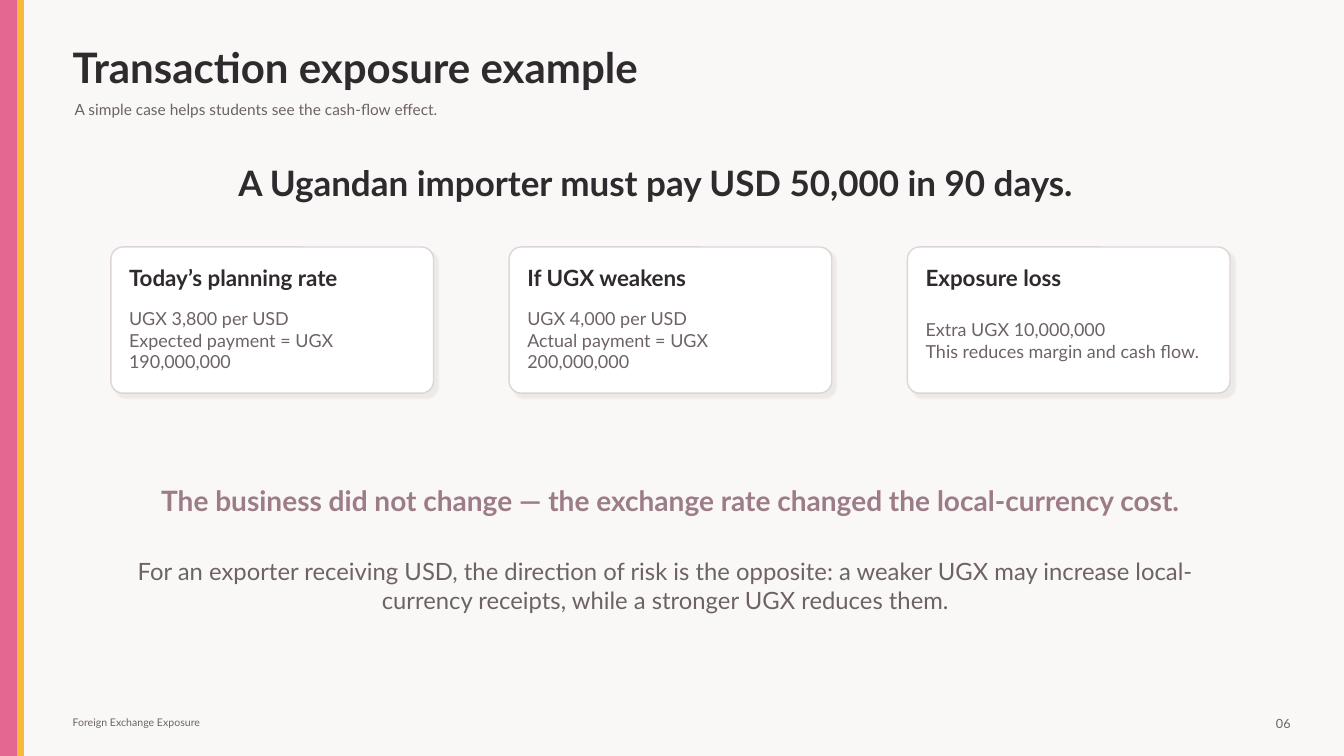
from dataclasses import dataclass

from lxml import etree
from pptx import Presentation, util as u
from pptx.dml import color
from pptx.enum import shapes, text
from pptx.oxml import ns

EMU_PER_PX = 9144


@dataclass(frozen=True)
class Theme:
    font: str = "Lato"
    paper: str = "FAF8F6"
    pink: str = "E46791"
    gold: str = "FAB938"
    ink: str = "2F2A2D"
    muted: str = "6D6264"
    mauve: str = "9B7C87"
    card: str = "FFFFFF"
    border: str = "D8CCD0"
    shadow: str = "B8ADA8"
    title_size: float = 30
    lead_size: float = 25
    takeaway_size: float = 20
    note_size: float = 17
    heading_size: float = 16
    body_size: float = 12.8
    subtitle_size: float = 11
    number_size: float = 9
    footer_size: float = 7.5


def px(*lengths):
    return [u.Emu(length * EMU_PER_PX) for length in lengths]


def rgb(value):
    return color.RGBColor.from_string(value)


def write_text(shape, content, *, font, size, ink, bold=False, align=text.PP_ALIGN.LEFT):
    frame = shape.text_frame
    frame.text = content
    frame.word_wrap = True
    frame.auto_size = text.MSO_AUTO_SIZE.NONE
    frame.vertical_anchor = text.MSO_ANCHOR.MIDDLE
    frame.margin_left = frame.margin_top = frame.margin_right = frame.margin_bottom = 0
    for paragraph in frame.paragraphs:
        paragraph.alignment = align
        paragraph.font.name = font
        paragraph.font.size = u.Pt(size)
        paragraph.font.bold = bold
        paragraph.font.color.rgb = rgb(ink)


class SlideBuilder:
    def __init__(self, slide, theme):
        self.slide = slide
        self.theme = theme
        fill = slide.background.fill
        fill.solid()
        fill.fore_color.rgb = rgb(theme.paper)

    def title(self, content, box):
        shape = self.slide.shapes.title
        shape.left, shape.top, shape.width, shape.height = px(*box)
        write_text(shape, content, font=self.theme.font, size=self.theme.title_size,
                   ink=self.theme.ink, bold=True)

    def label(self, content, box, **style):
        shape = self.slide.shapes.add_textbox(*px(*box))
        write_text(shape, content, font=self.theme.font, **style)

    def panel(self, kind, box, fill, line):
        shape = self.slide.shapes.add_shape(kind, *px(*box))
        shape.shadow.inherit = False
        shape.fill.solid()
        shape.fill.fore_color.rgb = rgb(fill)
        shape.line.color.rgb = rgb(line)
        shape.line.width = u.Pt(1)
        return shape

    def bar(self, box, fill):
        self.panel(shapes.MSO_SHAPE.RECTANGLE, box, fill, fill)

    def card(self, left, top, heading, body):
        theme = self.theme
        shape = self.panel(shapes.MSO_SHAPE.ROUNDED_RECTANGLE,
                           (left, top, 320, 145), theme.card, theme.border)
        shape.adjustments[0] = 0.083
        self.soften(shape)
        self.label(heading, (left + 18, top + 16, 284, 28),
                   size=theme.heading_size, ink=theme.ink, bold=True)
        self.label(body, (left + 18, top + 55, 284, 75),
                   size=theme.body_size, ink=theme.muted)

    def soften(self, shape):
        properties = shape._element.spPr
        line_color = properties.find(ns.qn("a:ln")).find(".//" + ns.qn("a:srgbClr"))
        etree.SubElement(line_color, ns.qn("a:alpha"), val="80000")
        shadow = etree.SubElement(
            properties.find(ns.qn("a:effectLst")), ns.qn("a:outerShdw"),
            blurRad=str(u.Pt(1)), dist=str(u.Pt(4)), dir=str(45 * 60000),
            algn="bl", rotWithShape="0")
        shade = etree.SubElement(shadow, ns.qn("a:srgbClr"), val=self.theme.shadow)
        etree.SubElement(shade, ns.qn("a:alpha"), val="18000")


def main():
    presentation = Presentation()
    presentation.slide_width, presentation.slide_height = px(1333, 750)
    theme = Theme()
    slide = presentation.slides.add_slide(presentation.slide_layouts[5])
    builder = SlideBuilder(slide, theme)
    center = text.PP_ALIGN.CENTER

    builder.bar((0, 0, 18, 750), theme.pink)
    builder.bar((18, 0, 5, 750), theme.gold)
    builder.title("Transaction exposure example", (72, 42, 1190, 48))
    builder.label("A simple case helps students see the cash-flow effect.",
                  (74, 94, 1140, 28), size=theme.subtitle_size, ink=theme.muted)
    builder.label("A Ugandan importer must pay USD 50,000 in 90 days.",
                  (100, 160, 1100, 42), size=theme.lead_size, ink=theme.ink,
                  bold=True, align=center)

    cards = [
        ("Today’s planning rate", "UGX 3,800 per USD\nExpected payment = UGX 190,000,000"),
        ("If UGX weakens", "UGX 4,000 per USD\nActual payment = UGX 200,000,000"),
        ("Exposure loss", "Extra UGX 10,000,000\nThis reduces margin and cash flow."),
    ]
    for column, (heading, body) in enumerate(cards):
        builder.card(110 + 395 * column, 245, heading, body)

    builder.label("The business did not change — the exchange rate changed the "
                  "local-currency cost.", (130, 472, 1070, 48),
                  size=theme.takeaway_size, ink=theme.mauve, bold=True, align=center)
    builder.label("For an exporter receiving USD, the direction of risk is the opposite: "
                  "a weaker UGX may increase local-currency receipts, while a stronger "
                  "UGX reduces them.", (135, 545, 1050, 72),
                  size=theme.note_size, ink=theme.muted, align=center)
    builder.label("Foreign Exchange Exposure", (72, 708, 350, 18),
                  size=theme.footer_size, ink=theme.muted)
    builder.label("06", (1245, 705, 35, 25), size=theme.number_size,
                  ink=theme.muted, align=text.PP_ALIGN.RIGHT)
    presentation.save("out.pptx")


if __name__ == "__main__":
    main()
